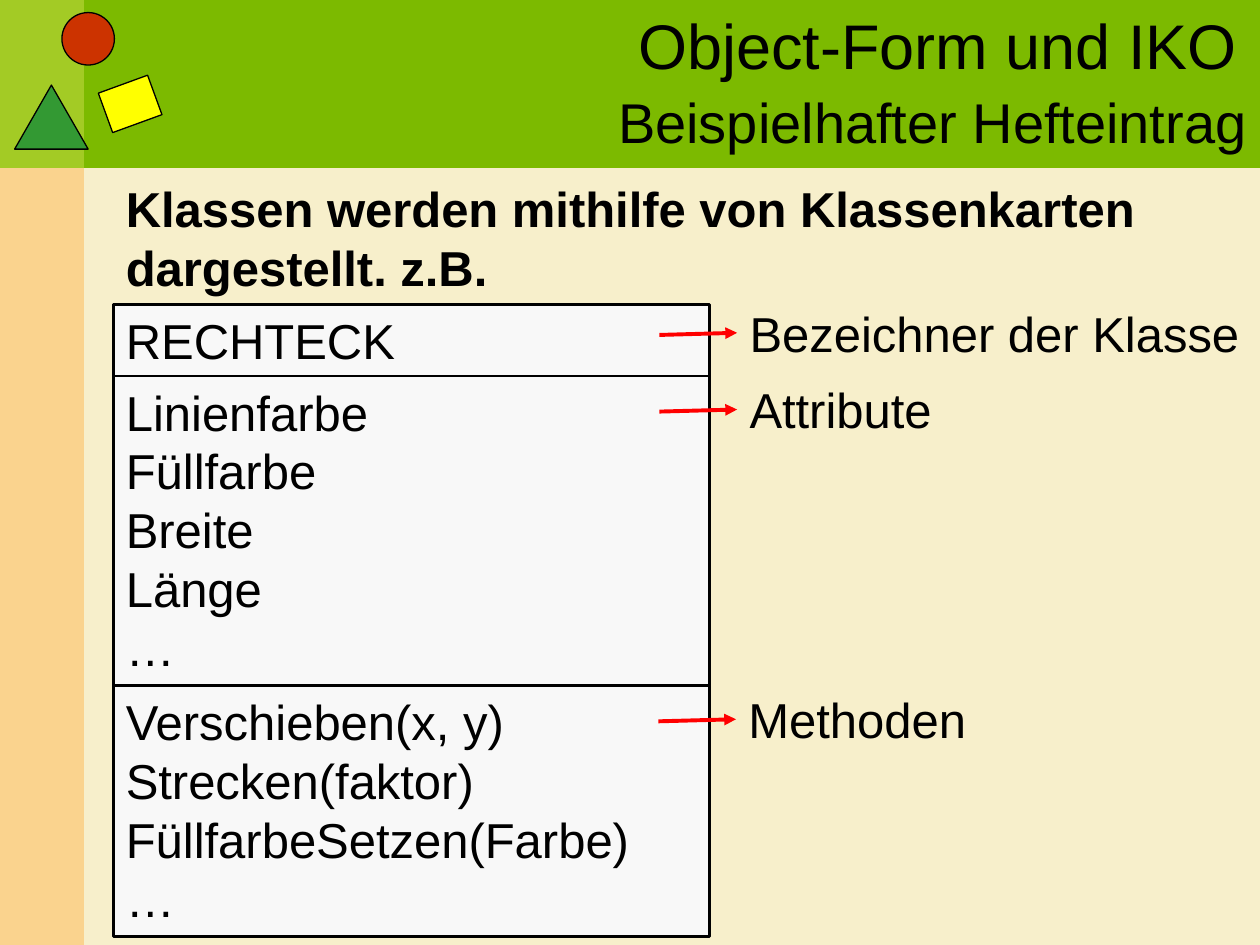
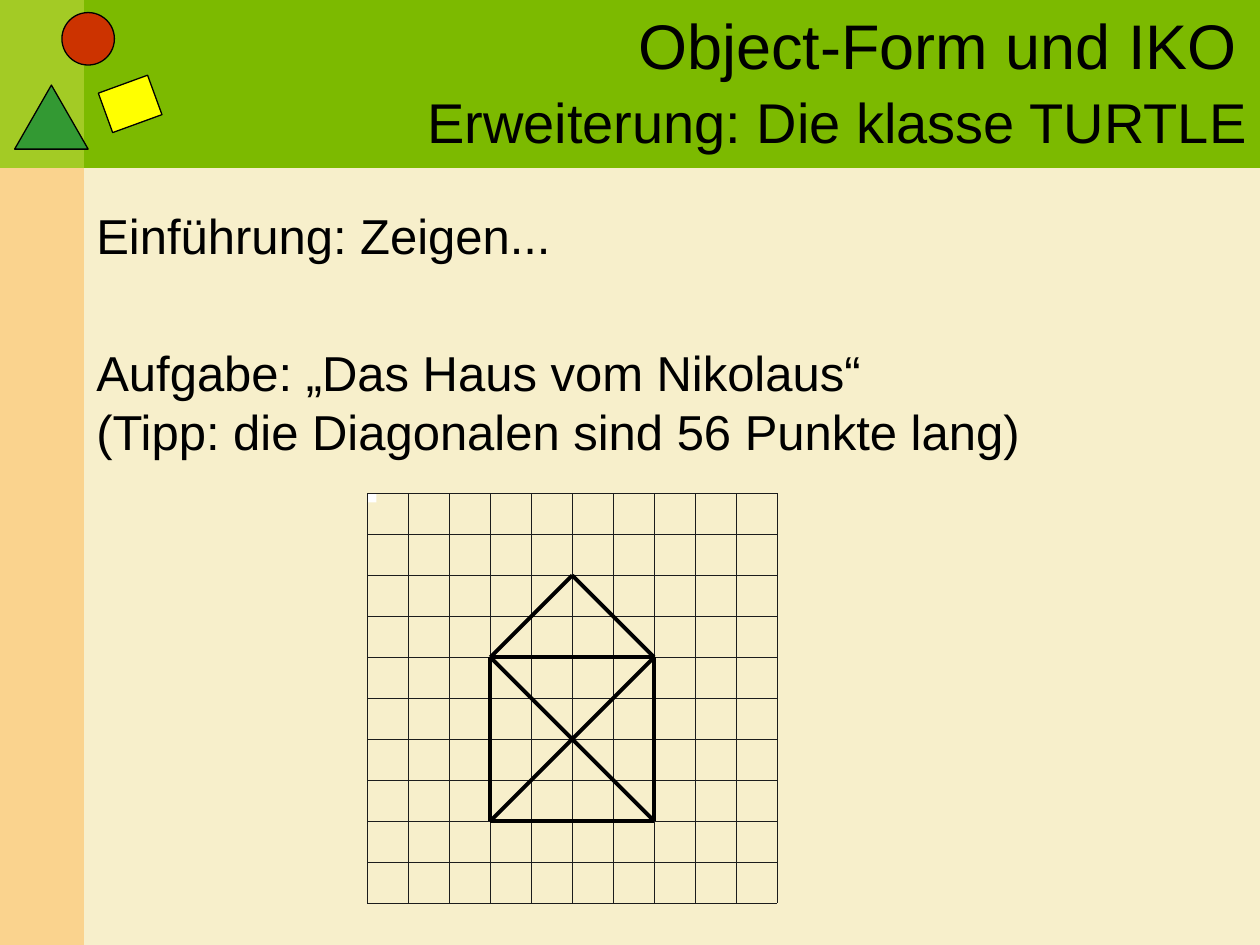
from itertools import combinations
from typing import NamedTuple

from lxml.etree import SubElement
from pptx import Presentation
from pptx.dml.color import RGBColor
from pptx.enum.shapes import MSO_CONNECTOR, MSO_SHAPE
from pptx.enum.text import MSO_ANCHOR, PP_ALIGN
from pptx.oxml.ns import qn
from pptx.util import Inches, Pt

# The slide is a grid of 120 columns by 90 rows, each a twelfth of an inch.
COLS, ROWS = 120, 90
UNIT = Inches(10) / COLS
SIDE, HEAD = 8, 16
FONT, BODY = "Arial", 28
COLOR = {
    "page": "F7EFCB", "head": "7CBA00", "side": "FAD38E", "corner": "A3CB25",
    "green": "339933", "red": "CC3300", "yellow": "FFFF00", "card": "F8F8F8",
    "ink": "000000", "arrow": "FF0000", "mesh": "1C1C1C", "white": "FFFFFF",
}


class Box(NamedTuple):
    col: float
    row: float
    wide: float
    high: float


class Form(NamedTuple):
    kind: MSO_SHAPE
    box: Box
    fill: str
    edge: float = 0
    turn: float = 0


class Part(NamedTuple):
    """One section of the class card, with the label that explains it."""
    row: float
    high: float
    lines: list[str]
    label: str
    col: float
    rise: float


RECT = MSO_SHAPE.RECTANGLE
DECOR = [
    Form(RECT, Box(0, 0, COLS, HEAD), "head"),
    Form(RECT, Box(0, 0, SIDE, ROWS), "side"),
    Form(RECT, Box(0, 0, SIDE, HEAD), "corner"),
    Form(MSO_SHAPE.ISOSCELES_TRIANGLE, Box(1.4, 8.1, 7, 6.1), "green", 0.75),
    Form(MSO_SHAPE.OVAL, Box(5.9, 1.2, 5, 5), "red", 0.75),
    Form(RECT, Box(9.9, 7.9, 5, 4), "yellow", 0.75, 340),
]
CARD_COL, CARD_WIDE = 10.8, 56.8
CARD = [
    Part(35.8, 29.5, ["Linienfarbe", "Füllfarbe", "Breite", "Länge", "…"],
         "Attribute", 70.2, 0.2),
    Part(65.3, 23.9, ["Verschieben(x, y)", "Strecken(faktor)",
                      "FüllfarbeSetzen(Farbe)", "…"], "Methoden", 70.1, 0.2),
    Part(29, 6.8, ["RECHTECK"], "Bezeichner der Klasse", 70.2, 0.7),
]


def span(size: float) -> int:
    return round(size * UNIT)


def place(box: Box) -> list[int]:
    return [span(size) for size in box]


def tint(name: str) -> RGBColor:
    return RGBColor.from_string(COLOR[name])


def draw(shapes, form: Form):
    shape = shapes.add_shape(form.kind, *place(form.box))
    shape.shadow.inherit = False
    shape.rotation = form.turn
    shape.fill.solid()
    shape.fill.fore_color.rgb = tint(form.fill)
    if form.edge:
        shape.line.color.rgb = tint("ink")
        shape.line.width = Pt(form.edge)
    else:
        shape.line.fill.background()
    return shape


def write(shape, lines: list[str], size: float = BODY, bold: bool = False,
          align=PP_ALIGN.LEFT, anchor=MSO_ANCHOR.TOP) -> None:
    frame = shape.text_frame
    frame.word_wrap = True
    frame.vertical_anchor = anchor
    frame.text = "\n".join(lines)
    for para in frame.paragraphs:
        para.alignment = align
        for run in para.runs:
            run.font.name, run.font.size, run.font.bold = FONT, Pt(size), bold
            run.font.color.rgb = tint("ink")


def note(slide, box: Box, *lines: str, **style):
    """Add a text box with one paragraph for each line."""
    shape = slide.shapes.add_textbox(*place(box))
    write(shape, list(lines), **style)
    return shape


def link(shapes, start: tuple, end: tuple, color: str, width: float):
    """Add a straight line between two grid points."""
    line = shapes.add_connector(
        MSO_CONNECTOR.STRAIGHT, *[span(size) for size in (*start, *end)])
    line.line.color.rgb = tint(color)
    line.line.width = Pt(width)
    SubElement(line._element.spPr, qn("a:effectLst"))
    return line


def start_slide(deck, title: str):
    """Add a slide with the shared background, bands, shapes and titles."""
    slide = deck.slides.add_slide(deck.slide_layouts[6])
    slide.background.fill.solid()
    slide.background.fill.fore_color.rgb = tint("page")
    for form in DECOR:
        draw(slide.shapes, form)
    note(slide, Box(17, 0, 102, 8.4), "Object-Form und IKO",
         size=36, align=PP_ALIGN.RIGHT)
    note(slide, Box(16, 8, 104, 7), title,
         size=32, align=PP_ALIGN.RIGHT, anchor=MSO_ANCHOR.MIDDLE)
    return slide


def add_part(slide, part: Part) -> None:
    box = Box(CARD_COL, part.row, CARD_WIDE, part.high)
    write(draw(slide.shapes, Form(RECT, box, "card", 1.5)), part.lines)
    spot = Box(part.col, part.row - part.rise, COLS - part.col, 6.8)
    label = note(slide, spot, part.label)
    mid = spot.row + spot.high / 2
    arrow = link(slide.shapes, (spot.col - 7.4, mid + 0.2), (spot.col, mid),
                 "arrow", 2.25)
    arrow.end_connect(label, 1)
    SubElement(arrow.line._get_or_add_ln(), qn("a:tailEnd"), type="triangle")


def add_house(slide) -> None:
    """Draw the house on a square mesh of ten by ten cells."""
    left, top, cell, count = 35, 47, 3.9, 10
    group = slide.shapes.add_group_shape().shapes

    def at(col: int, row: int) -> tuple[float, float]:
        return left + col * cell, top + row * cell

    draw(group, Form(RECT, Box(left, top, 0.85, 0.85), "white"))
    for step in range(count + 1):
        link(group, at(step, 0), at(step, count), "mesh", 0.1)
        link(group, at(0, step), at(count, step), "mesh", 0.1)

    eaves = [at(3, 4), at(7, 4)]
    walls = list(combinations([*eaves, at(3, 8), at(7, 8)], 2))
    roof = [(eave, at(5, 2)) for eave in eaves]
    for start, end in walls + roof:
        link(group, start, end, "ink", 2.25)


def main() -> None:
    deck = Presentation()
    deck.slide_width, deck.slide_height = span(COLS), span(ROWS)

    entry = start_slide(deck, "Beispielhafter Hefteintrag")
    note(entry, Box(CARD_COL, 16.4, 100.2, 12.5),
         "Klassen werden mithilfe von Klassenkarten dargestellt. z.B.",
         bold=True)
    for part in CARD:
        add_part(entry, part)

    turtle = start_slide(deck, "Erweiterung: Die klasse TURTLE")
    note(turtle, Box(SIDE, 19, 107, 6.8), "Einführung: Zeigen...")
    note(turtle, Box(SIDE, 32, 107, 12.4), "Aufgabe: „Das Haus vom Nikolaus“",
         "(Tipp: die Diagonalen sind 56 Punkte lang)")
    add_house(turtle)

    deck.save("out.pptx")


if __name__ == "__main__":
    main()
